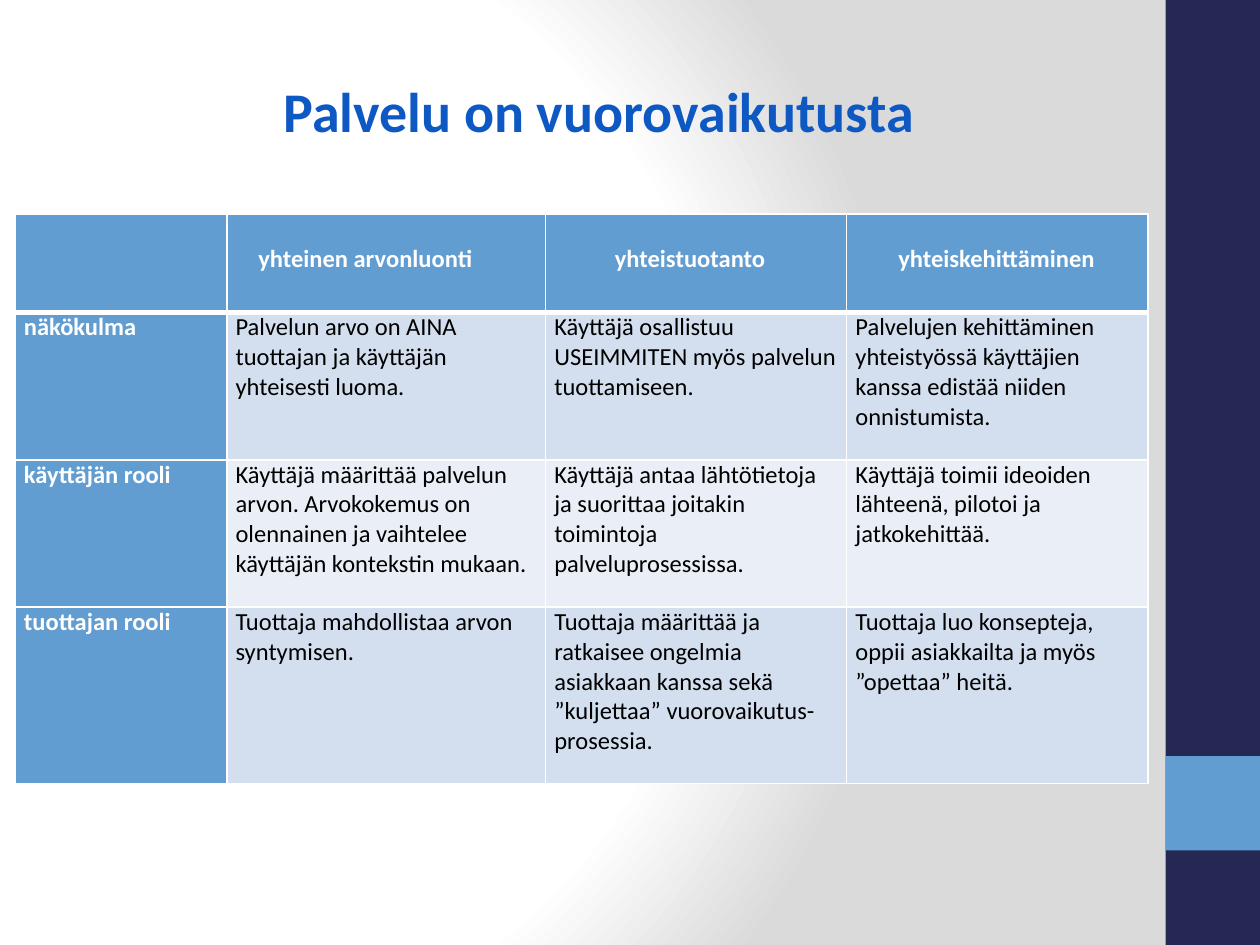
from pptx import Presentation
from pptx.dml.color import RGBColor
from pptx.enum.shapes import MSO_SHAPE
from pptx.oxml import parse_xml
from pptx.util import Inches, Pt

RECT = MSO_SHAPE.RECTANGLE
NS = ('xmlns:a="http://schemas.openxmlformats.org/drawingml/2006/main" '
      'xmlns:p="http://schemas.openxmlformats.org/presentationml/2006/main"')
FONT = "Calibri"
NAVY, BLUE, TITLE = "242852", "629DD1", "0E58C4"
WHITE, BLACK, GREY = "FFFFFF", "000000", "DADADA"
BANDS = ["D3DFEE", "EAEFF7"]
COLS = [1.68, 2.53, 2.39, 2.39]
ROWS = [0.78, 1.17, 1.17, 1.4]
INDENTS = [0.07, 0.25, 0.55, 0.41]
CELLS = [
    ["", "yhteinen arvonluonti", "yhteistuotanto", "yhteiskehittäminen"],
    ["näkökulma",
     "Palvelun arvo on AINA tuottajan ja käyttäjän yhteisesti luoma.",
     "Käyttäjä osallistuu USEIMMITEN myös palvelun tuottamiseen.",
     "Palvelujen kehittäminen yhteistyössä käyttäjien kanssa edistää niiden onnistumista."],
    ["käyttäjän rooli",
     "Käyttäjä määrittää palvelun arvon. Arvokokemus on olennainen ja vaihtelee "
     "käyttäjän kontekstin mukaan.",
     "Käyttäjä antaa lähtötietoja ja suorittaa joitakin toimintoja palveluprosessissa.",
     "Käyttäjä toimii ideoiden lähteenä, pilotoi ja jatkokehittää."],
    ["tuottajan rooli",
     "Tuottaja mahdollistaa arvon syntymisen.",
     "Tuottaja määrittää ja ratkaisee ongelmia asiakkaan kanssa sekä ”kuljettaa” "
     "vuorovaikutus-prosessia.",
     "Tuottaja luo konsepteja, oppii asiakkailta ja myös ”opettaa” heitä."],
]


def color(code):
    """Turn a hex string into a colour."""
    return RGBColor.from_string(code)


def style(para, size, code, bold):
    """Set the font of a paragraph."""
    font = para.font
    font.name, font.size, font.bold = FONT, Pt(size), bold
    font.color.rgb = color(code)


def paint_back(slide):
    """Give the slide a round gradient from white to grey."""
    stops = "".join(
        f'<a:gs pos="{pos}000"><a:srgbClr val="{code}"/></a:gs>'
        for pos, code in [(0, WHITE), (75, WHITE), (100, GREY)])
    back = parse_xml(
        f'<p:bg {NS}><p:bgPr><a:gradFill rotWithShape="1"><a:gsLst>{stops}</a:gsLst>'
        '<a:path path="circle"><a:fillToRect l="20000" t="50000" r="100000" b="50000"/>'
        '</a:path></a:gradFill><a:effectLst/></p:bgPr></p:bg>')
    slide.element.cSld.insert(0, back)


def add_bar(slide, top, height, code):
    """Add a plain block at the right edge."""
    bar = slide.shapes.add_shape(
        RECT, Inches(9.25), Inches(top), Inches(0.75), Inches(height))
    bar.shadow.inherit = False
    bar.fill.solid()
    bar.fill.fore_color.rgb = color(code)
    bar.line.fill.background()


def add_title(slide, text):
    """Add the slide heading."""
    box = slide.shapes.add_textbox(
        Inches(0.9), Inches(0.48), Inches(8.82), Inches(1.55))
    frame = box.text_frame
    frame.word_wrap = True
    frame.margin_left, frame.margin_top = Inches(1.35), Inches(0.13)
    frame.text = text
    style(frame.paragraphs[0], 32, TITLE, True)


def add_edges(cell, top, bottom):
    """Draw white borders round a cell, with widths in points."""
    widths = {"lnL": 1, "lnR": 1, "lnT": top, "lnB": bottom}
    props = cell._tc.get_or_add_tcPr()
    for i, (tag, width) in enumerate(widths.items()):
        props.insert(i, parse_xml(
            f'<a:{tag} {NS} w="{Pt(width)}"><a:solidFill><a:srgbClr val="{WHITE}"/>'
            f'</a:solidFill></a:{tag}>'))


def fill_cell(cell, row, col, text):
    """Write and style one cell by its place in the grid."""
    head = row == 0 or col == 0
    cell.margin_left = Inches(INDENTS[col] if row == 0 else 0.07)
    cell.margin_right = Inches(0.07)
    cell.margin_top = Inches(0.24 if row == 0 else 0)
    cell.margin_bottom = 0
    cell.text = text
    style(cell.text_frame.paragraphs[0], 14, WHITE if head else BLACK, head)
    cell.fill.solid()
    cell.fill.fore_color.rgb = color(BLUE if head else BANDS[(row - 1) % 2])
    add_edges(cell, 3 if row == 1 else 1, 3 if row == 0 else 1)


def add_grid(slide):
    """Add the table of roles."""
    table = slide.shapes.add_table(
        len(ROWS), len(COLS), Inches(0.12), Inches(1.7),
        Inches(sum(COLS)), Inches(sum(ROWS))).table
    for col, width in zip(table.columns, COLS):
        col.width = Inches(width)
    for row, height in zip(table.rows, ROWS):
        row.height = Inches(height)
    for r, texts in enumerate(CELLS):
        for c, text in enumerate(texts):
            fill_cell(table.cell(r, c), r, c, text)


def main():
    """Build and save the slide."""
    deck = Presentation()
    deck.slide_width, deck.slide_height = Inches(10), Inches(7.5)
    slide = deck.slides.add_slide(deck.slide_layouts[6])
    paint_back(slide)
    add_bar(slide, 0, 7.5, NAVY)
    add_bar(slide, 6, 0.75, BLUE)
    add_title(slide, "Palvelu on vuorovaikutusta")
    add_grid(slide)
    deck.save("out.pptx")


if __name__ == "__main__":
    main()
